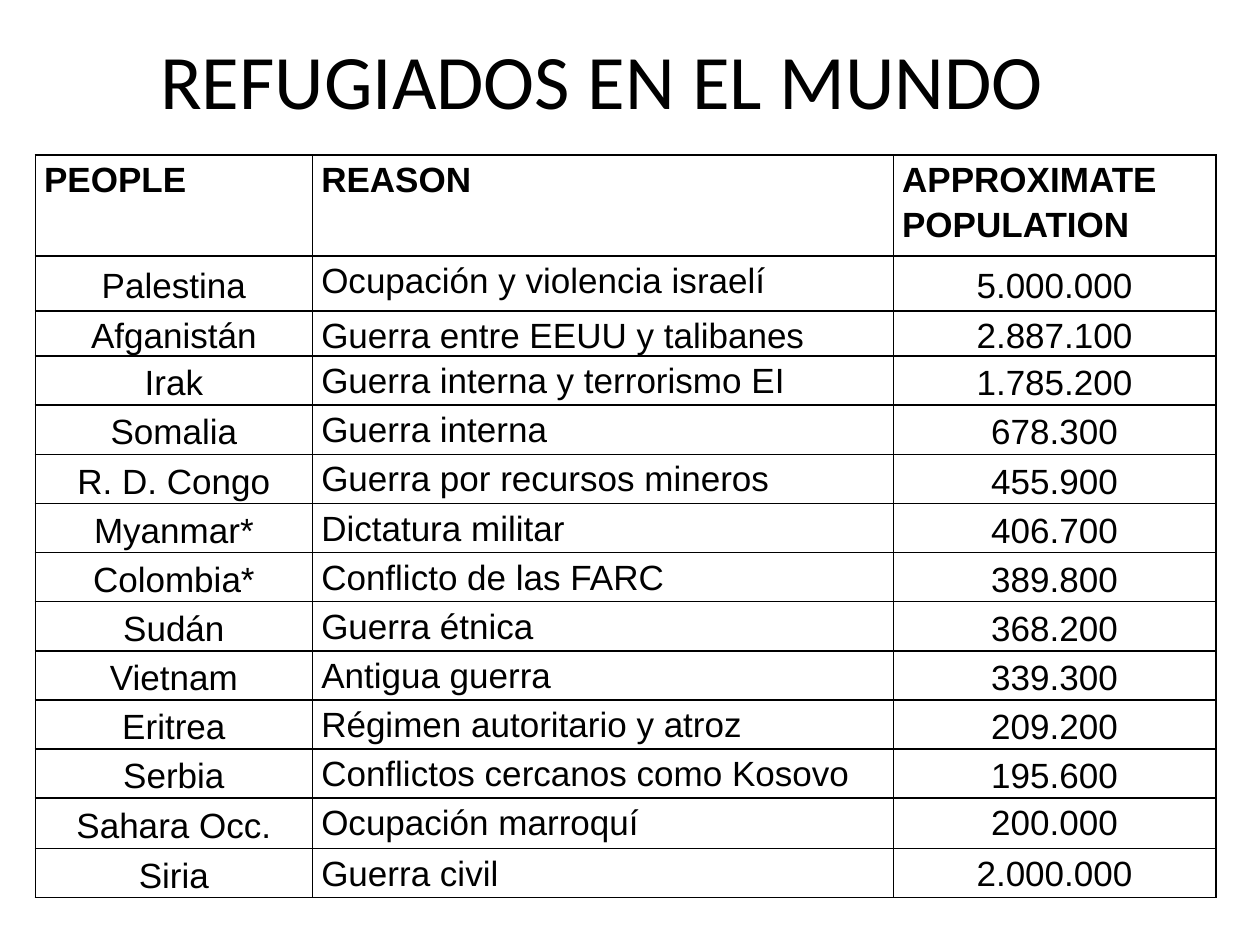
from dataclasses import dataclass

from lxml import etree
from pptx import Presentation
from pptx.dml.color import RGBColor
from pptx.enum import text
from pptx.oxml import ns
from pptx.util import Inches, Pt


@dataclass(frozen=True)
class Theme:
    ink: str = "000000"
    title_font: str = "Calibri"
    body_font: str = "Arial"
    title_size: int = 44
    body_size: int = 20
    border: int = 1
    spacing: float = 1.15
    inset: float = 0.07


@dataclass(frozen=True)
class Refugees:
    people: str
    reason: str
    population: str
    height: float = 0.39
    population_anchor: text.MSO_ANCHOR = text.MSO_ANCHOR.MIDDLE


THEME = Theme()
LEFT, TOP = 0.28, 1.23
COLUMNS = (2.2, 4.61, 2.56)
HEADINGS = ("PEOPLE", "REASON", "APPROXIMATE POPULATION")
HEADING_HEIGHT = 0.8
ROWS = (
    Refugees("Palestina", "Ocupación y violencia israelí", "5.000.000", 0.44),
    Refugees("Afganistán", "Guerra entre EEUU y talibanes", "2.887.100", 0.35),
    Refugees("Irak", "Guerra interna y terrorismo EI", "1.785.200"),
    Refugees("Somalia", "Guerra interna", "678.300"),
    Refugees("R. D. Congo", "Guerra por recursos mineros", "455.900"),
    Refugees("Myanmar*", "Dictatura militar", "406.700"),
    Refugees("Colombia*", "Conflicto de las FARC", "389.800"),
    Refugees("Sudán", "Guerra étnica", "368.200"),
    Refugees("Vietnam", "Antigua guerra", "339.300"),
    Refugees("Eritrea", "Régimen autoritario y atroz", "209.200"),
    Refugees("Serbia", "Conflictos cercanos como Kosovo", "195.600"),
    Refugees("Sahara Occ.", "Ocupación marroquí", "200.000", 0.4, text.MSO_ANCHOR.TOP),
    Refugees("Siria", "Guerra civil", "2.000.000", population_anchor=text.MSO_ANCHOR.TOP),
)


def write(tf, content: str, *, font: str, size: int, bold: bool = False,
          align=text.PP_ALIGN.LEFT, spacing: float | None = None) -> None:
    p = tf.paragraphs[0]
    p.alignment = align
    p.line_spacing = spacing
    r = p.add_run()
    r.text = content
    r.font.name = font
    r.font.size = Pt(size)
    r.font.bold = bold
    r.font.color.rgb = RGBColor.from_string(THEME.ink)


def add_borders(cell) -> None:
    tc_pr = cell._tc.get_or_add_tcPr()
    for side in ("L", "R", "T", "B"):
        line = etree.SubElement(tc_pr, ns.qn(f"a:ln{side}"), w=str(Pt(THEME.border)))
        fill = etree.SubElement(line, ns.qn("a:solidFill"))
        etree.SubElement(fill, ns.qn("a:srgbClr"), val=THEME.ink)


def fill_cell(cell, content: str, *, bold: bool = False, align=text.PP_ALIGN.LEFT,
              anchor=text.MSO_ANCHOR.TOP) -> None:
    cell.margin_left = cell.margin_right = Inches(THEME.inset)
    cell.margin_top = cell.margin_bottom = 0
    cell.vertical_anchor = anchor
    add_borders(cell)
    cell.fill.background()
    write(cell.text_frame, content, font=THEME.body_font, size=THEME.body_size,
          bold=bold, align=align, spacing=THEME.spacing)


def add_refugee_table(slide) -> None:
    heights = [HEADING_HEIGHT] + [row.height for row in ROWS]
    table = slide.shapes.add_table(
        len(heights), len(COLUMNS), Inches(LEFT), Inches(TOP),
        Inches(sum(COLUMNS)), Inches(sum(heights))).table
    table.first_row = table.horz_banding = False
    for column, width in zip(table.columns, COLUMNS):
        column.width = Inches(width)
    for row, height in zip(table.rows, heights):
        row.height = Inches(height)
    for i, heading in enumerate(HEADINGS):
        fill_cell(table.cell(0, i), heading, bold=True)
    center = text.PP_ALIGN.CENTER
    for i, row in enumerate(ROWS, start=1):
        fill_cell(table.cell(i, 0), row.people, align=center, anchor=text.MSO_ANCHOR.MIDDLE)
        fill_cell(table.cell(i, 1), row.reason)
        fill_cell(table.cell(i, 2), row.population, align=center, anchor=row.population_anchor)


def add_title(slide) -> None:
    sp = slide.shapes.title
    sp.left, sp.top, sp.width, sp.height = Inches(LEFT), 0, Inches(9), Inches(1.25)
    tf = sp.text_frame
    tf.vertical_anchor = text.MSO_ANCHOR.MIDDLE
    write(tf, "REFUGIADOS EN EL MUNDO", font=THEME.title_font,
          size=THEME.title_size, align=text.PP_ALIGN.CENTER)


def main() -> None:
    prs = Presentation()
    prs.slide_width, prs.slide_height = Inches(10), Inches(7.5)
    slide = prs.slides.add_slide(prs.slide_layouts[5])
    add_refugee_table(slide)
    add_title(slide)
    prs.save("out.pptx")


if __name__ == "__main__":
    main()
